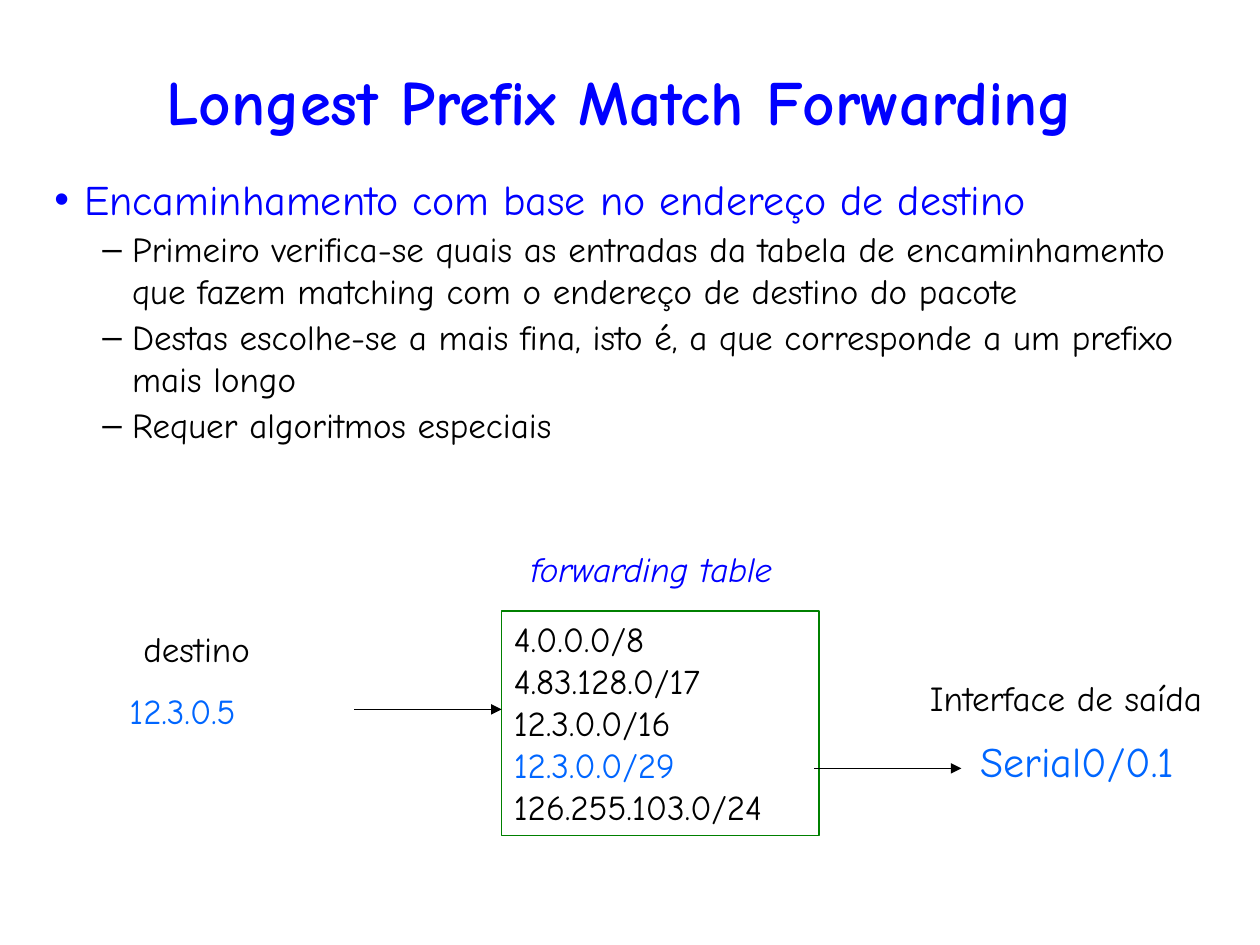
from lxml import etree
from pptx import Presentation
from pptx.dml.color import RGBColor
from pptx.enum import shapes, text
from pptx.oxml import ns
from pptx.util import Cm, Pt

FONT = "Comic Neue"
COLORS = {"heading": "0000FF", "body": "000000", "match": "0066FF", "frame": "008000"}

TITLE = "Longest Prefix Match Forwarding"
TOPIC = "Encaminhamento com base no endereço de destino"
STEPS = [
    "Primeiro verifica-se quais as entradas da tabela de encaminhamento "
    "que fazem matching com o endereço de destino do pacote",
    "Destas escolhe-se a mais fina, isto é, a que corresponde a um prefixo mais longo",
    "Requer algoritmos especiais",
]
PREFIXES = ["4.0.0.0/8", "4.83.128.0/17", "12.3.0.0/16", "12.3.0.0/29", "126.255.103.0/24"]
BEST_MATCH = "12.3.0.0/29"


def rgb(name):
    return RGBColor.from_string(COLORS[name])


def place(item, left, top, width, height):
    item.left, item.top, item.width, item.height = map(Cm, (left, top, width, height))


def style(paragraph, color, size=20, bold=False, italic=False):
    font = paragraph.font
    font.name, font.size, font.bold, font.italic = FONT, Pt(size), bold, italic
    font.color.rgb = rgb(color)


def add_title(slide):
    title = slide.shapes.title
    place(title, 0.84, 1.07, 23.29, 1.9)
    frame = title.text_frame
    frame.text = TITLE
    frame.vertical_anchor = text.MSO_ANCHOR.MIDDLE
    paragraph = frame.paragraphs[0]
    paragraph.alignment = text.PP_ALIGN.CENTER
    style(paragraph, "heading", 36, bold=True)


def set_bullet(paragraph, char, margin):
    properties = paragraph._p.get_or_add_pPr()
    properties.set("marL", str(Cm(margin)))
    properties.set("indent", str(-Cm(0.6)))
    etree.SubElement(properties, ns.qn("a:buChar")).set("char", char)


def add_points(slide):
    points = slide.placeholders[1]
    place(points, 0.84, 3.38, 23.93, 6.73)
    frame = points.text_frame
    frame.text = "\n".join([TOPIC, *STEPS])
    frame.auto_size = text.MSO_AUTO_SIZE.NONE
    topic, *steps = frame.paragraphs
    topic.space_before = Pt(0)
    set_bullet(topic, "•", 0.6)
    style(topic, "heading", 24)
    for step in steps:
        step.level = 1
        step.space_before = Pt(2)
        set_bullet(step, "–", 1.57)
        style(step, "body")


def add_label(slide, wording, box, color, size=20, italic=False, align=text.PP_ALIGN.CENTER):
    label = slide.shapes.add_textbox(*map(Cm, box))
    frame = label.text_frame
    frame.word_wrap = False
    frame.text = wording
    paragraph = frame.paragraphs[0]
    paragraph.alignment = align
    style(paragraph, color, size, italic=italic)


def add_forwarding_table(slide):
    table = slide.shapes.add_shape(
        shapes.MSO_SHAPE.RECTANGLE, Cm(10.11), Cm(12.32), Cm(6.4), Cm(4.52))
    table.shadow.inherit = False
    table.fill.background()
    table.line.color.rgb = rgb("frame")
    table.line.width = Pt(0.75)
    frame = table.text_frame
    frame.word_wrap = False
    frame.vertical_anchor = text.MSO_ANCHOR.TOP
    frame.text = "\n".join(PREFIXES)
    for paragraph in frame.paragraphs:
        paragraph.alignment = text.PP_ALIGN.LEFT
        style(paragraph, "match" if paragraph.text == BEST_MATCH else "body")


def add_arrow(slide, left, y, length=2.97):
    arrow = slide.shapes.add_connector(
        shapes.MSO_CONNECTOR.STRAIGHT, Cm(left), Cm(y), Cm(left + length), Cm(y))
    arrow.line.color.rgb = rgb("body")
    arrow.line.width = Pt(0.75)
    etree.SubElement(arrow.line._get_or_add_ln(), ns.qn("a:tailEnd")).set("type", "triangle")
    etree.SubElement(arrow._element.spPr, ns.qn("a:effectLst"))


def main():
    deck = Presentation()
    deck.slide_width, deck.slide_height = Cm(25.4), Cm(19.05)
    slide = deck.slides.add_slide(deck.slide_layouts[1])
    add_title(slide)
    add_points(slide)
    add_forwarding_table(slide)
    add_arrow(slide, 7.14, 14.3)
    add_arrow(slide, 16.41, 15.49)
    add_label(slide, "12.3.0.5", (2.36, 13.77, 3.1, 1.12), "match", align=text.PP_ALIGN.LEFT)
    add_label(slide, "destino", (2.49, 12.52, 2.95, 1.12), "body")
    add_label(slide, "forwarding table", (9.98, 10.92, 6.32, 1.12), "heading", italic=True)
    add_label(slide, "Serial0/0.1", (19.23, 14.71, 4.98, 1.27), "match", 24)
    add_label(slide, "Interface de saída", (18.11, 13.51, 6.76, 1.12), "body")
    deck.save("out.pptx")


if __name__ == "__main__":
    main()
